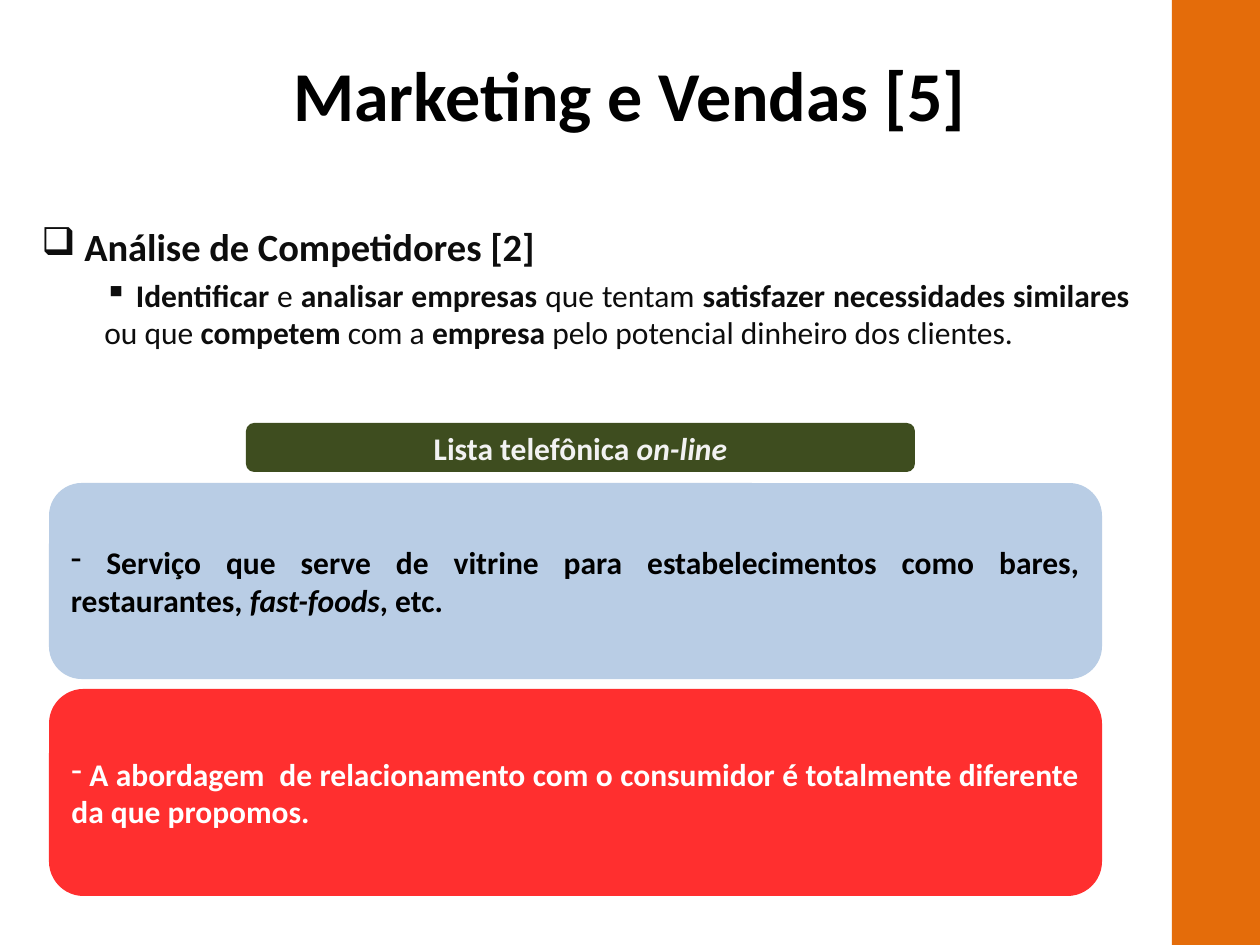
from lxml import etree
from pptx import Presentation
from pptx import util as u
from pptx.dml.color import RGBColor
from pptx.enum import shapes, text
from pptx.oxml.ns import qn

PX = u.Inches(1) / 126
BLACK = RGBColor(0x00, 0x00, 0x00)
WHITE = RGBColor(0xFF, 0xFF, 0xFF)
INK = RGBColor(0x0D, 0x0D, 0x0D)
PALE = RGBColor(0xF2, 0xF2, 0xF2)
ORANGE = RGBColor(0xE4, 0x6C, 0x0A)
BLUE = RGBColor(0xB9, 0xCD, 0xE5)
GREEN = RGBColor(0x3E, 0x4D, 0x1F)
RED = RGBColor(0xFF, 0x2F, 0x2F)
CENTER, JUSTIFY = text.PP_ALIGN.CENTER, text.PP_ALIGN.JUSTIFY


def box(px):
    return [u.Emu(round(v * PX)) for v in px]


def write(p, parts, size, color, align, emphasis="italic", bullet=None, indent=0):
    """Fill a paragraph with runs; every second part carries the emphasis."""
    p.alignment = align
    p.font.name, p.font.size, p.font.color.rgb = "Calibri", u.Pt(size), color
    if emphasis != "bold":
        p.font.bold = True
    for i, part in enumerate(parts):
        r = p.add_run()
        r.text = part
        if i % 2:
            setattr(r.font, emphasis, True)
    if bullet:
        pPr = p._p.get_or_add_pPr()
        pPr.set("marL", str(round(indent * PX)))
        pPr.set("indent", "0")
        mark = etree.Element(qn("a:buChar"), char=bullet)
        pPr.find(qn("a:defRPr")).addprevious(mark)


prs = Presentation()
prs.slide_width, prs.slide_height = box((1260, 945))
s = prs.slides.add_slide(prs.slide_layouts[6])

# Title
tf = s.shapes.add_textbox(*box((29, 20, 1201, 148))).text_frame
tf.word_wrap = True
tf.vertical_anchor = text.MSO_ANCHOR.MIDDLE
write(tf.paragraphs[0], ["Marketing e Vendas [5]"], 40, BLACK, CENTER)

# Competitor analysis
tf = s.shapes.add_textbox(*box((29, 217, 1113, 748))).text_frame
tf.word_wrap = True
p = tf.paragraphs[0]
p.space_before = u.Pt(4.4)
write(p, [" Análise de Competidores [2]"], 22, INK, JUSTIFY, bullet="❑")
p = tf.add_paragraph()
p.space_before = u.Pt(3.6)
definition = [
    " ", "Identificar", " e ", "analisar empresas", " que tentam ",
    "satisfazer necessidades similares", " ou que ", "competem", " com a ",
    "empresa", " pelo potencial dinheiro dos clientes.",
]
write(p, definition, 18, INK, JUSTIFY, "bold", "▪", 63)

# Side bar and competitor cards
RECT, ROUND = shapes.MSO_SHAPE.RECTANGLE, shapes.MSO_SHAPE.ROUNDED_RECTANGLE
service = [
    " Serviço que serve de vitrine para estabelecimentos como bares, restaurantes, ",
    "fast-foods", ", etc.",
]
approach = [
    " A abordagem  de relacionamento com o consumidor é totalmente diferente da que propomos."
]
panels = [
    (RECT, (1172, 0, 88, 945), ORANGE, [], WHITE, CENTER, None),
    (ROUND, (49, 483, 1053, 196), BLUE, service, BLACK, JUSTIFY, "-"),
    (ROUND, (246, 423, 669, 49), GREEN, ["Lista telefônica ", "on-line"], PALE, CENTER, None),
    (ROUND, (49, 689, 1053, 207), RED, approach, WHITE, JUSTIFY, "-"),
]
for kind, place, fill, parts, color, align, bullet in panels:
    sp = s.shapes.add_shape(kind, *box(place))
    sp.shadow.inherit = False
    sp.fill.solid()
    sp.fill.fore_color.rgb = fill
    sp.line.fill.background()
    if parts:
        tf = sp.text_frame
        tf.word_wrap = True
        tf.vertical_anchor = text.MSO_ANCHOR.MIDDLE
        write(tf.paragraphs[0], parts, 18, color, align, bullet=bullet)

prs.save("out.pptx")
